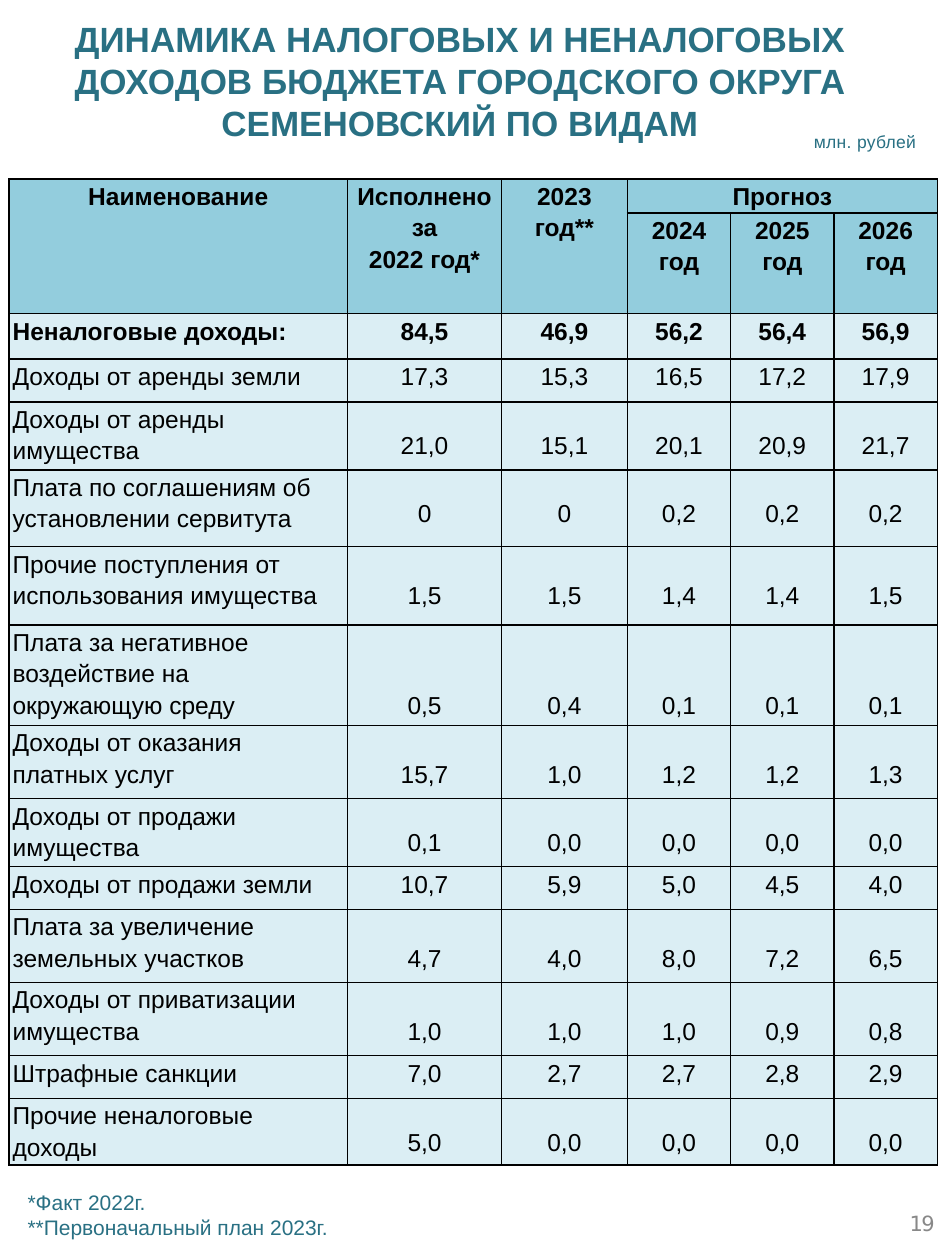
import pptx
import pptx.dml.color
import pptx.enum.text
import pptx.oxml
import pptx.oxml.ns
import pptx.util

Inches = pptx.util.Inches
Pt = pptx.util.Pt
RGBColor = pptx.dml.color.RGBColor
ALIGN = pptx.enum.text.PP_ALIGN

TEAL = RGBColor(0x29, 0x70, 0x83)
GRAY = RGBColor(0x88, 0x88, 0x88)
BLACK = RGBColor(0, 0, 0)
HEADER_FILL = RGBColor(0x93, 0xCD, 0xDD)
BODY_FILL = RGBColor(0xDB, 0xEE, 0xF4)

COLUMN_WIDTHS = [2.69, 1.22, 1, 0.82, 0.82, 0.82]
HEADER_HEIGHTS = [0.27, 0.8]
HEADERS = [
    (0, 0, "Наименование"),
    (0, 1, "Исполнено за\n2022 год*"),
    (0, 2, "2023\nгод**"),
    (0, 3, "Прогноз"),
    (1, 3, "2024 год"),
    (1, 4, "2025 год"),
    (1, 5, "2026 год"),
]
INCOME_ROWS = [
    ("Неналоговые доходы:", "84,5 46,9 56,2 56,4 56,9", 0.36, 0),
    ("Доходы от аренды земли", "17,3 15,3 16,5 17,2 17,9", 0.34, 0),
    ("Доходы от аренды имущества", "21,0 15,1 20,1 20,9 21,7", 0.54, 0.21),
    ("Плата по соглашениям об установлении сервитута", "0 0 0,2 0,2 0,2", 0.61, 0.21),
    ("Прочие поступления от использования имущества", "1,5 1,5 1,4 1,4 1,5", 0.62, 0.25),
    ("Плата за негативное воздействие на окружающую среду", "0,5 0,4 0,1 0,1 0,1", 0.8, 0.5),
    ("Доходы от оказания платных услуг", "15,7 1,0 1,2 1,2 1,3", 0.58, 0.25),
    ("Доходы от продажи имущества", "0,1 0,0 0,0 0,0 0,0", 0.54, 0.21),
    ("Доходы от продажи земли", "10,7 5,9 5,0 4,5 4,0", 0.34, 0),
    ("Плата за увеличение земельных участков", "4,7 4,0 8,0 7,2 6,5", 0.58, 0.25),
    ("Доходы от приватизации имущества", "1,0 1,0 1,0 0,9 0,8", 0.58, 0.25),
    ("Штрафные санкции", "7,0 2,7 2,7 2,8 2,9", 0.34, 0),
    ("Прочие неналоговые доходы", "5,0 0,0 0,0 0,0 0,0", 0.53, 0.21),
]


def write_text(frame, text, size=14, color=BLACK, bold=False, align=ALIGN.LEFT,
               font="Arial", line_spacing=None, tracking=None):
    frame.word_wrap = True
    for index, line in enumerate(text.split("\n")):
        paragraph = frame.add_paragraph() if index else frame.paragraphs[0]
        paragraph.alignment = align
        paragraph.line_spacing = line_spacing
        run = paragraph.add_run()
        run.text = line
        run.font.name = font
        run.font.size = Pt(size)
        run.font.bold = bold
        run.font.color.rgb = color
        if tracking is not None:
            run.font._element.set("spc", str(tracking))


def set_margins(target, left, top, right, bottom):
    target.margin_left = Inches(left)
    target.margin_top = Inches(top)
    target.margin_right = Inches(right)
    target.margin_bottom = Inches(bottom)


def add_title(slide, text):
    title = slide.shapes.title
    title.left, title.top = Inches(0.17), Inches(0.13)
    title.width, title.height = Inches(7.1), Inches(1.02)
    frame = title.text_frame
    frame.auto_size = pptx.enum.text.MSO_AUTO_SIZE.NONE
    frame.vertical_anchor = pptx.enum.text.MSO_ANCHOR.TOP
    set_margins(frame, 0, 0.01, 0.14, 0)
    write_text(frame, text, size=20, color=TEAL, bold=True, align=ALIGN.CENTER)


def add_label(slide, box, text, margins, **text_format):
    label = slide.shapes.add_textbox(*(Inches(length) for length in box))
    set_margins(label.text_frame, *margins)
    write_text(label.text_frame, text, **text_format)


def style_cell(cell, fill, top_margin=0):
    properties = cell._tc.get_or_add_tcPr()
    for side in ("lnL", "lnR", "lnT", "lnB"):
        properties.append(pptx.oxml.parse_xml(
            f'<a:{side} {pptx.oxml.ns.nsdecls("a")} w="12700"><a:solidFill>'
            f'<a:srgbClr val="{BLACK}"/></a:solidFill></a:{side}>'))
    cell.fill.solid()
    cell.fill.fore_color.rgb = fill
    set_margins(cell, 0.03, top_margin, 0.03, 0)


def add_income_table(slide):
    heights = HEADER_HEIGHTS + [row[2] for row in INCOME_ROWS]
    table = slide.shapes.add_table(
        len(heights), len(COLUMN_WIDTHS), Inches(0.07), Inches(1.42),
        Inches(sum(COLUMN_WIDTHS)), Inches(sum(heights))).table
    table.first_row = False
    table.horz_banding = False
    for column, width in zip(table.columns, COLUMN_WIDTHS):
        column.width = Inches(width)
    for row, height in zip(table.rows, heights):
        row.height = Inches(height)

    for row in range(2):
        for column in range(len(COLUMN_WIDTHS)):
            style_cell(table.cell(row, column), HEADER_FILL)
    for column in range(3):
        table.cell(0, column).merge(table.cell(1, column))
    table.cell(0, 3).merge(table.cell(0, 5))
    for row, column, text in HEADERS:
        write_text(table.cell(row, column).text_frame, text, bold=True,
                   align=ALIGN.CENTER, line_spacing=1.15)

    for row, (name, values, _, offset) in enumerate(INCOME_ROWS, start=2):
        for column, text in enumerate([name] + values.split()):
            cell = table.cell(row, column)
            style_cell(cell, BODY_FILL, offset if column else 0)
            write_text(cell.text_frame, text, bold=row == 2, line_spacing=1.15,
                       align=ALIGN.CENTER if column else ALIGN.LEFT)


def main():
    presentation = pptx.Presentation()
    presentation.slide_width = Inches(7.5)
    presentation.slide_height = Inches(10)
    slide = presentation.slides.add_slide(presentation.slide_layouts[5])
    add_title(slide, "ДИНАМИКА НАЛОГОВЫХ И НЕНАЛОГОВЫХ ДОХОДОВ БЮДЖЕТА "
                     "ГОРОДСКОГО ОКРУГА СЕМЕНОВСКИЙ ПО ВИДАМ")
    add_income_table(slide)
    add_label(slide, (0.12, 9.39, 5.59, 0.5),
              "*Факт 2022г.\n**Первоначальный план 2023г.",
              (0.1, 0.05, 0.1, 0.05), size=12, color=TEAL)
    add_label(slide, (6.18, 0.96, 1.09, 0.24), "млн. рублей", (0, 0.08, 0, 0),
              size=10, color=TEAL, align=ALIGN.RIGHT, tracking=20)
    add_label(slide, (7.16, 9.61, 0.31, 0.25), "19", (0.06, 0, 0, 0),
              size=12, color=GRAY, font="DejaVu Sans", tracking=-100)
    presentation.save("out.pptx")


if __name__ == "__main__":
    main()
